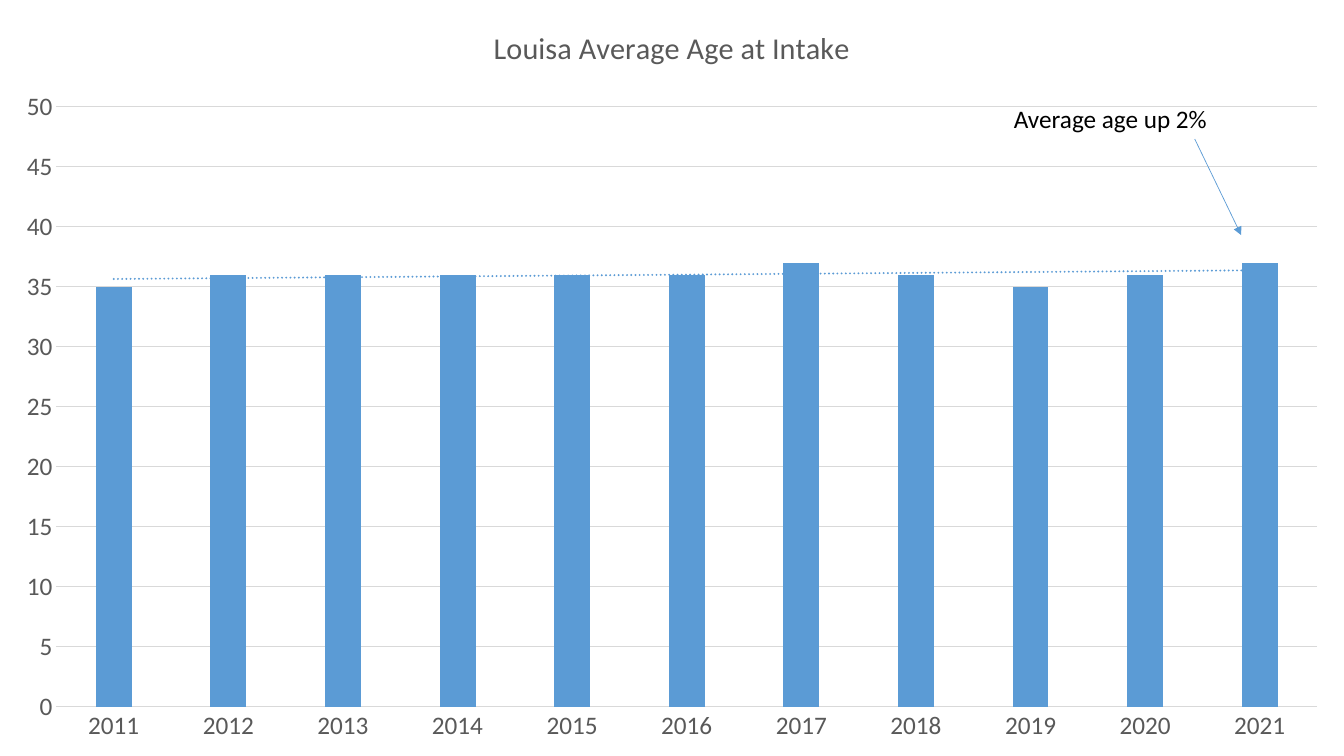
from lxml import etree
from pptx import Presentation
from pptx.chart.data import CategoryChartData
from pptx.dml.color import RGBColor
from pptx.enum.chart import XL_CHART_TYPE, XL_TICK_MARK
from pptx.enum.shapes import MSO_CONNECTOR
from pptx.enum.text import MSO_AUTO_SIZE
from pptx.oxml import parse_xml
from pptx.oxml.ns import nsdecls, qn
from pptx.util import Inches, Pt

COLUMNS = XL_CHART_TYPE.COLUMN_CLUSTERED
NO_TICK = XL_TICK_MARK.NONE
STRAIGHT = MSO_CONNECTOR.STRAIGHT
FIT_SHAPE = MSO_AUTO_SIZE.SHAPE_TO_FIT_TEXT

BLUE = RGBColor(0x5B, 0x9B, 0xD5)
GREY = RGBColor(0x59, 0x59, 0x59)
PALE = RGBColor(0xD9, 0xD9, 0xD9)
BLACK = RGBColor(0, 0, 0)
FONT = "Calibri"

TITLE = "Louisa Average Age at Intake"
CALLOUT = "Average age up 2%"
FIRST_YEAR = 2011
AGES = [35, 36, 36, 36, 36, 36, 37, 36, 35, 36, 37]

# Shares of the slide's width and height
PLOT_AREA = {"x": 0.042, "y": 0.141, "w": 0.938, "h": 0.794}
CALLOUT_BOX = (0.747, 0.13, 0.161, 0.053)
ARROW = (0.889, 0.184, 0.9235, 0.311)

AXIS_FORMAT = {"major_tick_mark": NO_TICK, "minor_tick_mark": NO_TICK}
AGE_SCALE = {"minimum_scale": 0, "maximum_scale": 50, "major_unit": 5,
             "has_major_gridlines": True}
COLUMN_FORMAT = {"gap_width": 219, "overlap": -27, "vary_by_categories": False}


def set_all(target, values):
    for name, value in values.items():
        setattr(target, name, value)


def style_font(font, size, color):
    set_all(font, {"name": FONT, "size": Pt(size), "bold": False})
    font.color.rgb = color


def style_line(line, color, width):
    line.color.rgb = color
    line.width = Pt(width)


def add_trend(series):
    """Put a dotted linear trend line before the series' categories."""
    trend = parse_xml(
        f'<c:trendline {nsdecls("c", "a")}><c:spPr>'
        f'<a:ln w="{Pt(1.5)}" cap="rnd"><a:solidFill><a:srgbClr val="{BLUE}"/>'
        '</a:solidFill><a:prstDash val="sysDot"/></a:ln></c:spPr>'
        '<c:trendlineType val="linear"/><c:dispRSqr val="0"/>'
        '<c:dispEq val="0"/></c:trendline>')
    series._element.find(qn("c:cat")).addprevious(trend)


def place_plot(chart):
    """Fix the inner plot area to its shares of the chart."""
    plot_area = chart._chartSpace.chart.plotArea
    for old in plot_area.findall(qn("c:layout")):
        plot_area.remove(old)
    shares = "".join(f'<c:{key} val="{share}"/>' for key, share in PLOT_AREA.items())
    plot_area.insert(0, parse_xml(
        f'<c:layout {nsdecls("c")}><c:manualLayout><c:layoutTarget val="inner"/>'
        f'<c:xMode val="edge"/><c:yMode val="edge"/>{shares}'
        '</c:manualLayout></c:layout>'))


def add_age_chart(slide, width, height):
    data = CategoryChartData()
    data.categories = [str(FIRST_YEAR + i) for i in range(len(AGES))]
    data.add_series(TITLE, AGES)
    chart = slide.shapes.add_chart(COLUMNS, 0, 0, width, height, data).chart
    chart.has_legend = False
    style_font(chart.font, 18, BLACK)

    chart.has_title = True
    chart.chart_title.include_in_layout = False
    title = chart.chart_title.text_frame
    title.text = TITLE
    style_font(title.paragraphs[0].runs[0].font, 21.6, GREY)

    years, ages = chart.category_axis, chart.value_axis
    for axis in (years, ages):
        set_all(axis, AXIS_FORMAT)
        style_font(axis.tick_labels.font, 18, GREY)
    set_all(ages, AGE_SCALE)
    style_line(years.format.line, PALE, 0.75)
    style_line(ages.major_gridlines.format.line, PALE, 0.75)
    ages.format.line.fill.background()

    columns = chart.plots[0]
    set_all(columns, COLUMN_FORMAT)
    series = columns.series[0]
    series.invert_if_negative = False
    series.format.fill.solid()
    series.format.fill.fore_color.rgb = BLUE
    add_trend(series)
    place_plot(chart)


def add_callout(slide, width, height):
    scale = (width, height, width, height)
    box = [round(share * side) for share, side in zip(CALLOUT_BOX, scale)]
    frame = slide.shapes.add_textbox(*box).text_frame
    set_all(frame, {"text": CALLOUT, "word_wrap": False, "auto_size": FIT_SHAPE})
    style_font(frame.paragraphs[0].runs[0].font, 18, BLACK)

    ends = [round(share * side) for share, side in zip(ARROW, scale)]
    arrow = slide.shapes.add_connector(STRAIGHT, *ends)
    style_line(arrow.line, BLUE, 0.5)
    etree.SubElement(arrow.line._get_or_add_ln(), qn("a:tailEnd"), type="triangle")
    etree.SubElement(arrow._element.spPr, qn("a:effectLst"))


def main():
    deck = Presentation()
    set_all(deck, {"slide_width": Inches(13.33), "slide_height": Inches(7.5)})
    slide = deck.slides.add_slide(deck.slide_layouts[6])
    add_age_chart(slide, deck.slide_width, deck.slide_height)
    add_callout(slide, deck.slide_width, deck.slide_height)
    deck.save("out.pptx")


if __name__ == "__main__":
    main()
